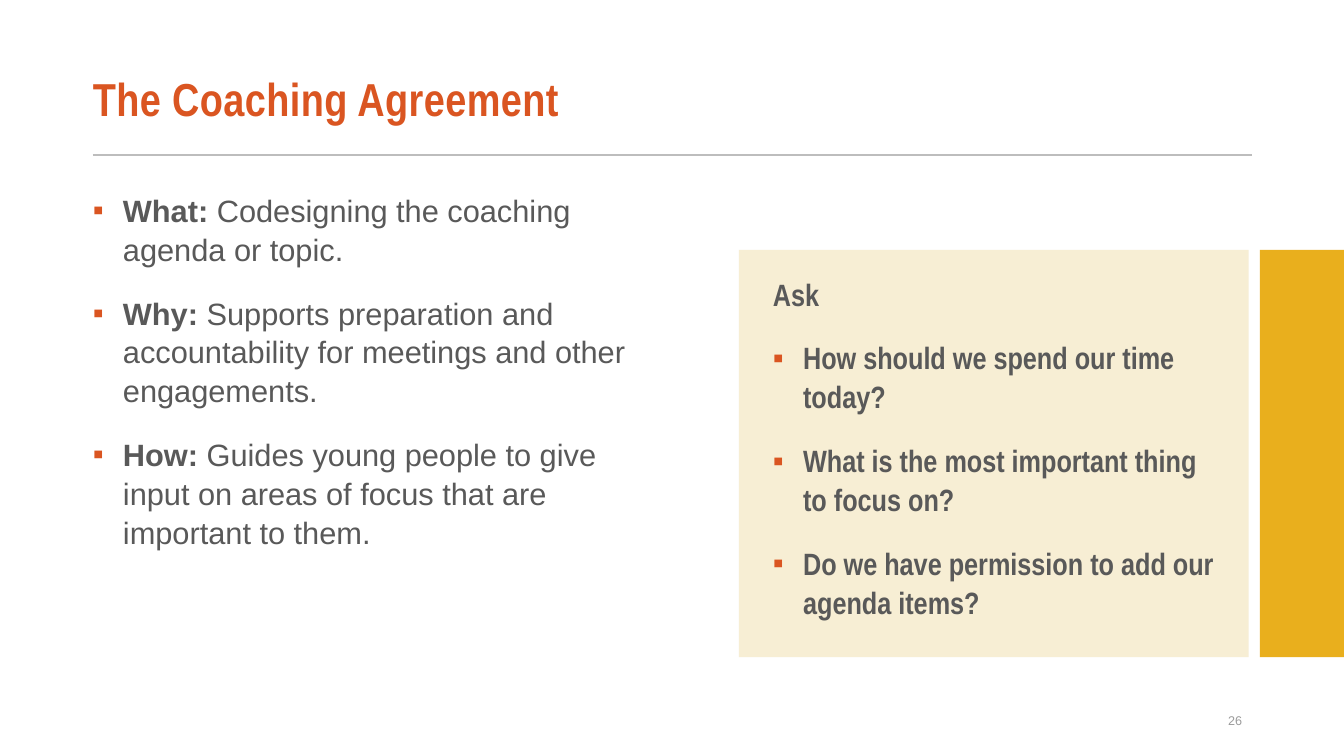
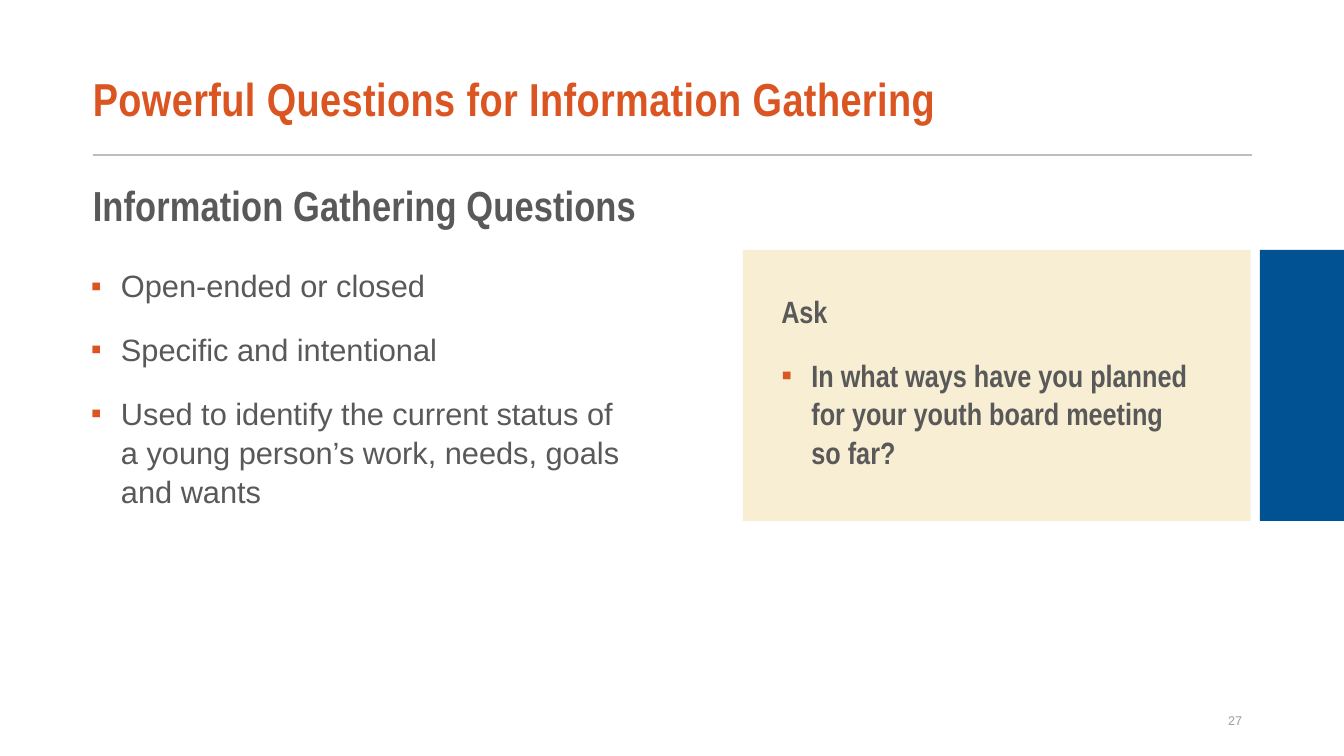
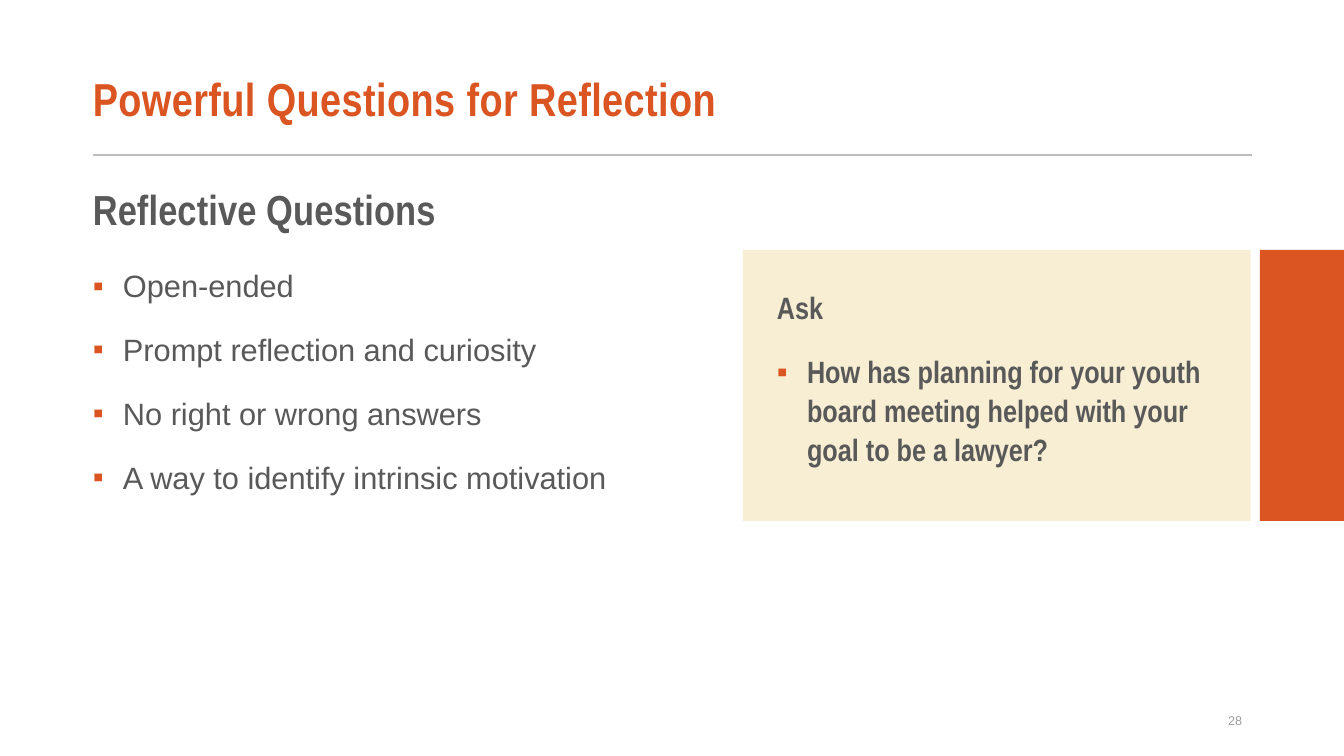
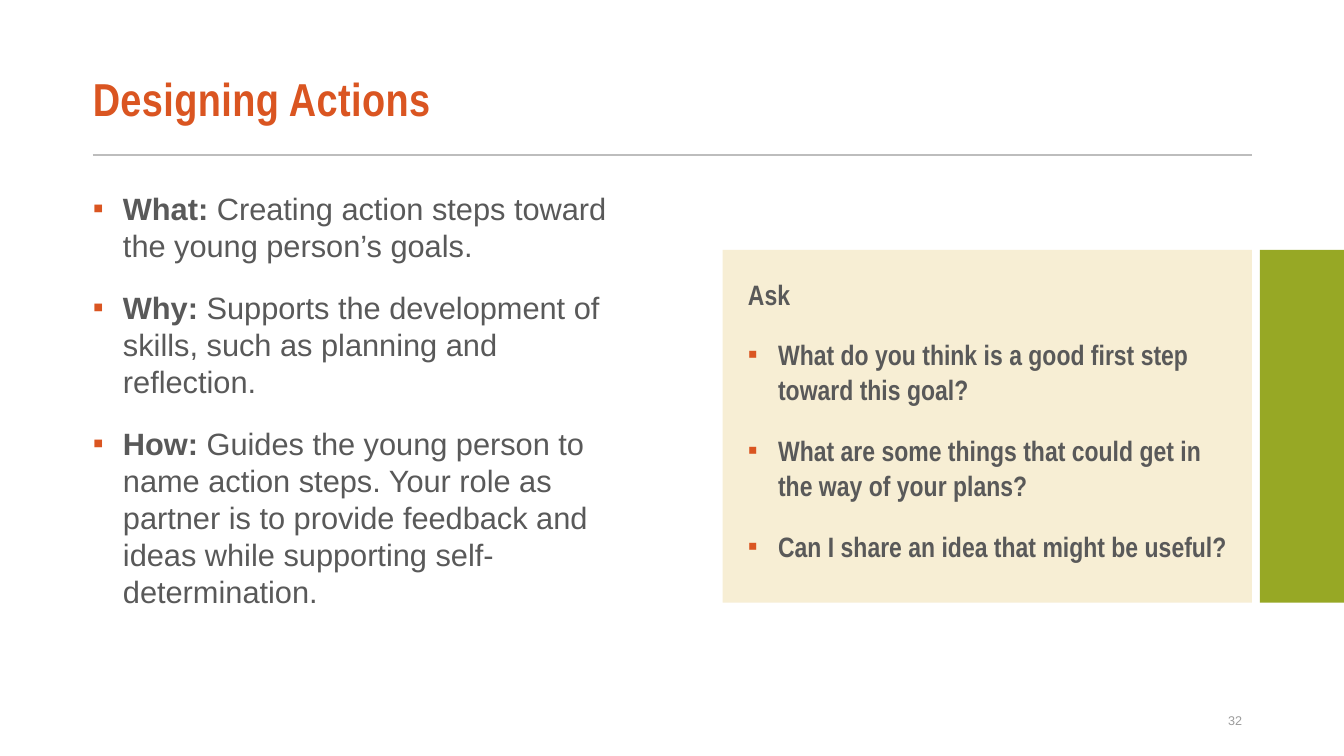
from lxml import etree
from pptx import Presentation
from pptx.dml.color import RGBColor
from pptx.enum import shapes, text
from pptx.oxml import ns
from pptx.util import Cm, Pt

ORANGE, GREY, RULE_GREY, NUMBER_GREY, CREAM = "DA5521", "595959", "BDBDBD", "9B9B9B", "F7EED4"
LEFT, PANEL_TOP = 2.34, 6.3
LEFT_COLUMN = (LEFT, 4.65, 13.74, 12.88)

rgb = RGBColor.from_string


def add_text(page, place, entries, size=22, font="Arial", color=GREY, bold=False,
             spacing=1.05, tracking=0, bullets_from=None, insets=(0, 0.13, 0.25, 0.13),
             anchor=text.MSO_ANCHOR.TOP, align=text.PP_ALIGN.LEFT):
    """Write one paragraph per entry; an entry such as "Why: ..." gets a bold lead.

    Entries from index bullets_from onwards are bulleted; tracking is in points.
    """
    box = page.shapes.add_textbox(*map(Cm, place))
    frame = box.text_frame
    frame.word_wrap = True
    frame.vertical_anchor = anchor
    frame.margin_left, frame.margin_top, frame.margin_right, frame.margin_bottom = map(Cm, insets)
    for index, entry in enumerate(entries):
        para = frame.add_paragraph() if index else frame.paragraphs[0]
        if bullets_from is not None and index >= bullets_from:
            props = para._p.get_or_add_pPr()
            props.set("marL", str(Cm(0.76)))
            props.set("indent", str(-Cm(0.76)))
            bullet_color = etree.SubElement(props, ns.qn("a:buClr"))
            etree.SubElement(bullet_color, ns.qn("a:srgbClr"), val=ORANGE)
            etree.SubElement(props, ns.qn("a:buFont"), typeface="Arial")
            etree.SubElement(props, ns.qn("a:buChar"), char="▪")
        para.alignment = align
        para.line_spacing = spacing
        para.space_before = Pt(18 if index else 0)
        lead, colon, rest = entry.partition(": ")
        parts = [(lead + colon, True), (rest, bold)] if colon else [(entry, bold)]
        for words, heavy in parts:
            span = para.add_run()
            span.text = words
            span.font.name, span.font.size, span.font.bold = font, Pt(size), heavy
            span.font.color.rgb = rgb(color)
            if tracking:
                span._r.get_or_add_rPr().set("spc", str(round(tracking * 100)))


# panel: left, width, height; ask_place and body_place: left, top, width, height
slides = [
    dict(number=26, title="The Coaching Agreement", accent="E9AF1D",
         panel=(18.62, 12.85, 10.26), ask_place=(19.48, 6.76, 11.46, 9.8),
         questions=["How should we spend our time today?",
                    "What is the most important thing to focus on?",
                    "Do we have permission to add our agenda items?"],
         body_place=LEFT_COLUMN,
         body=["What: Codesigning the coaching agenda or topic.",
               "Why: Supports preparation and accountability for meetings and other engagements.",
               "How: Guides young people to give input on areas of focus that are important to them."]),
    dict(number=27, title="Powerful Questions for Information Gathering", accent="005293",
         panel=(18.72, 12.8, 6.83), ask_place=(19.69, 7.19, 10.69, 4.67),
         questions=["In what ways have you planned for your youth board meeting so far?"],
         subhead="Information Gathering Questions", subhead_top=4.65,
         body_place=(2.29, 6.55, 13.79, 10.59),
         body=["Open-ended or closed",
               "Specific and intentional",
               "Used to identify the current status of a young person’s work, needs, goals and wants"]),
    dict(number=28, title="Powerful Questions for Reflection", accent=ORANGE,
         panel=(18.72, 12.8, 6.83), ask_place=(19.58, 7.11, 11.23, 5.59),
         questions=["How has planning for your youth board meeting helped with your goal to be a lawyer?"],
         subhead="Reflective Questions", subhead_top=4.75,
         body_place=(LEFT, 6.55, 14.4, 6.55),
         body=["Open-ended",
               "Prompt reflection and curiosity",
               "No right or wrong answers",
               "A way to identify intrinsic motivation"]),
    dict(number=32, title="Designing Actions", accent="97A825",
         panel=(18.21, 13.34, 8.89), ask_place=(18.85, 6.81, 12.6, 11.86), ask_size=20,
         questions=["What do you think is a good first step toward this goal?",
                    "What are some things that could get in the way of your plans?",
                    "Can I share an idea that might be useful?"],
         body_place=LEFT_COLUMN, body_spacing=1.0,
         body=["What: Creating action steps toward the young person’s goals.",
               "Why: Supports the development of skills, such as planning and reflection.",
               "How: Guides the young person to name action steps. Your role as partner is to "
               "provide feedback and ideas while supporting self-determination."]),
]

deck = Presentation()
deck.slide_width, deck.slide_height = Cm(33.87), Cm(19.05)

for slide in slides:
    page = deck.slides.add_slide(deck.slide_layouts[6])

    rule = page.shapes.add_connector(shapes.MSO_CONNECTOR.STRAIGHT,
                                     Cm(LEFT), Cm(3.91), Cm(31.55), Cm(3.91))
    rule.line.color.rgb = rgb(RULE_GREY)
    rule.line.width = Pt(1.5)
    etree.SubElement(rule._element.spPr, ns.qn("a:effectLst"))

    panel_left, panel_width, panel_height = slide["panel"]
    for left, width, color in [(panel_left, panel_width, CREAM), (31.75, 2.12, slide["accent"])]:
        block = page.shapes.add_shape(shapes.MSO_SHAPE.RECTANGLE, Cm(left), Cm(PANEL_TOP),
                                      Cm(width), Cm(panel_height))
        block.shadow.inherit = False
        block.fill.solid()
        block.fill.fore_color.rgb = rgb(color)
        block.line.fill.background()

    add_text(page, (LEFT, 1.37, 29.21, 2.41), [slide["title"]], size=33, font="Arial Narrow",
             color=ORANGE, bold=True, spacing=0.87, tracking=0.3, anchor=text.MSO_ANCHOR.MIDDLE)
    if "subhead" in slide:
        add_text(page, (LEFT, slide["subhead_top"], 14.33, 2.29), [slide["subhead"]], size=30,
                 font="Arial Narrow", bold=True, spacing=0.85, tracking=0.1,
                 insets=(0, 0.08, 0.25, 0.13))
    add_text(page, slide["body_place"], slide["body"], bullets_from=0,
             spacing=slide.get("body_spacing", 1.05))
    add_text(page, slide["ask_place"], ["Ask"] + slide["questions"], bullets_from=1,
             size=slide.get("ask_size", 22), font="Arial Narrow", bold=True)
    add_text(page, (23.93, 17.65, 7.62, 1.02), [str(slide["number"])], size=9, color=NUMBER_GREY,
             spacing=1.0, insets=(0.25, 0.13, 0.25, 0.13),
             anchor=text.MSO_ANCHOR.MIDDLE, align=text.PP_ALIGN.RIGHT)

deck.save("out.pptx")
